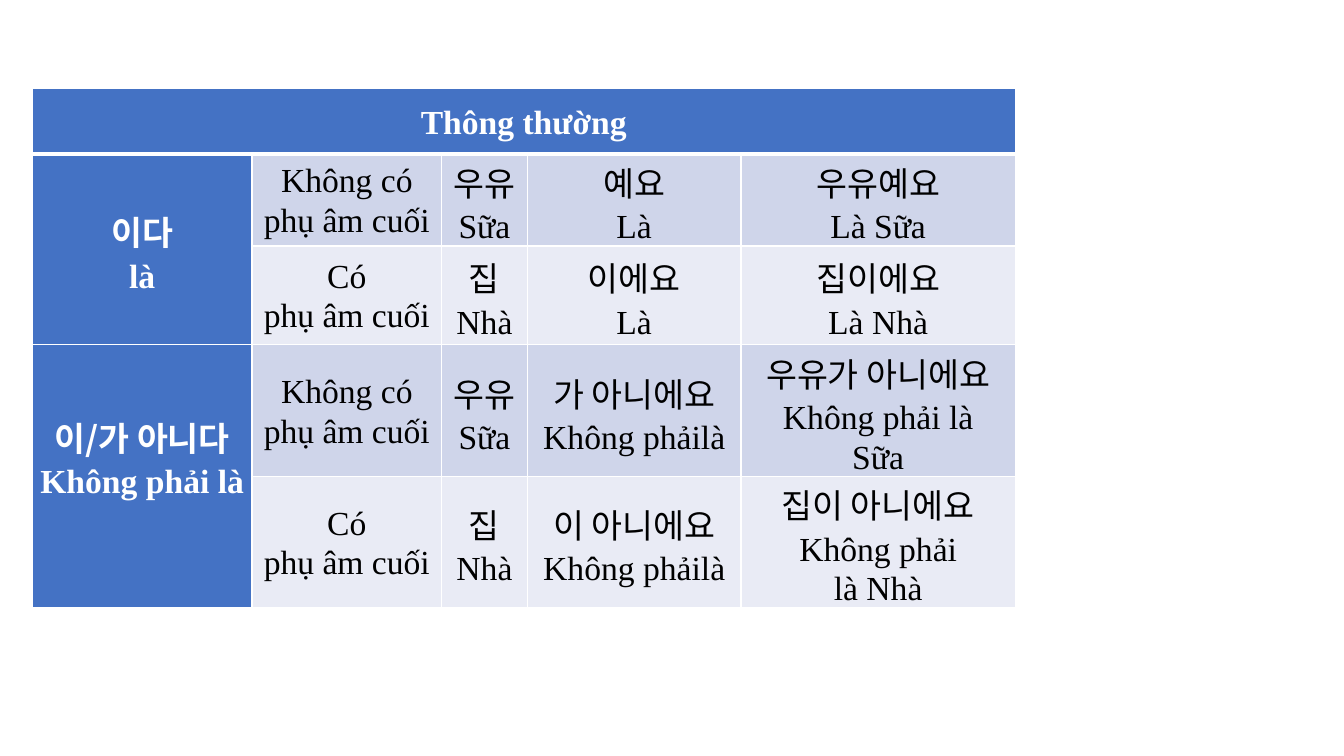
import dataclasses

import lxml.etree
import pptx
import pptx.dml.color
import pptx.enum.text
import pptx.oxml.ns
import pptx.util

Inches = pptx.util.Inches
Pt = pptx.util.Pt
qn = pptx.oxml.ns.qn

LATIN = "Times New Roman"
KOREAN = "Noto Sans CJK KR"
BLUE, WHITE, BLACK = "4472C4", "FFFFFF", "000000"
BANDS = ["CFD5EA", "E9EBF5"]
WIDTHS = [2.18, 1.88, 0.85, 2.12, 2.72]
HEIGHTS = [0.65, 0.85, 0.98, 1.28, 1.28]


@dataclasses.dataclass
class Head:
    row: int
    rows: int
    cols: int
    lines: list[str]
    foot: float = 0  # bottom margin, lifts the text


HEADS = [
    Head(0, 1, 5, ["Thông thường"]),
    Head(1, 2, 1, ["이다", "là"]),
    Head(3, 2, 1, ["이/가 아니다", "Không phải là"], 0.42),
]
NO_END = ["Không có", "phụ âm cuối"]
WITH_END = ["Có", "phụ âm cuối"]
MILK, HOUSE = ["우유", "Sữa"], ["집", "Nhà"]
BODY = [
    [NO_END, MILK, ["예요", "Là"], ["우유예요", "Là Sữa"]],
    [WITH_END, HOUSE, ["이에요", "Là"], ["집이에요", "Là Nhà"]],
    [NO_END, MILK, ["가 아니에요", "Không phảilà"],
     ["우유가 아니에요", "Không phải là", "Sữa"]],
    [WITH_END, HOUSE, ["이 아니에요", "Không phảilà"],
     ["집이 아니에요", "Không phải", "là Nhà"]],
]


def color(code: str) -> pptx.dml.color.RGBColor:
    return pptx.dml.color.RGBColor.from_string(code)


def border(cell, low: float = 1) -> None:
    """Draw white lines around a cell, the bottom one `low` points wide."""
    props = cell._tc.get_or_add_tcPr()
    for side, width in zip("LRTB", [1, 1, 1, low]):
        line = lxml.etree.SubElement(props, qn(f"a:ln{side}"), w=str(Pt(width)))
        fill = lxml.etree.SubElement(line, qn("a:solidFill"))
        lxml.etree.SubElement(fill, qn("a:srgbClr"), val=WHITE)


def write(cell, lines: list[str], ink: str, bold: bool) -> None:
    """Write centred lines, Korean ones in the Korean font."""
    for num, text in enumerate(lines):
        frame = cell.text_frame
        para = frame.add_paragraph() if num else frame.paragraphs[0]
        para.alignment = pptx.enum.text.PP_ALIGN.CENTER
        para.line_spacing = 1.07
        run = para.add_run()
        run.text = text
        face = KOREAN if any("가" <= char <= "힣" for char in text) else LATIN
        font = run.font
        font.size, font.bold, font.name = Pt(24), bold, face
        font.color.rgb = color(ink)
        lxml.etree.SubElement(run._r.get_or_add_rPr(), qn("a:ea"), typeface=face)


def style(cell, back: str, foot: float = 0) -> None:
    cell.fill.solid()
    cell.fill.fore_color.rgb = color(back)
    cell.vertical_anchor = pptx.enum.text.MSO_ANCHOR.MIDDLE
    cell.margin_left = cell.margin_right = Inches(0.07)
    cell.margin_top, cell.margin_bottom = 0, Inches(foot)


def main() -> None:
    deck = pptx.Presentation()
    deck.slide_width, deck.slide_height = Inches(13.33), Inches(7.5)
    slide = deck.slides.add_slide(deck.slide_layouts[6])

    # Table grid
    table = slide.shapes.add_table(
        len(HEIGHTS), len(WIDTHS), Inches(0.32), Inches(0.88),
        Inches(sum(WIDTHS)), Inches(sum(HEIGHTS))).table
    for col, width in zip(table.columns, WIDTHS):
        col.width = Inches(width)
    for num, (row, height) in enumerate(zip(table.rows, HEIGHTS)):
        row.height = Inches(height)
        for cell in row.cells:
            border(cell, 1 if num else 3)

    # Blue headings
    for head in HEADS:
        cell = table.cell(head.row, 0)
        cell.merge(table.cell(head.row + head.rows - 1, head.cols - 1))
        style(cell, BLUE, head.foot)
        write(cell, head.lines, WHITE, True)

    # Banded body
    for row, items in enumerate(BODY):
        for col, lines in enumerate(items, 1):
            cell = table.cell(row + 1, col)
            style(cell, BANDS[row % 2])
            write(cell, lines, BLACK, False)

    deck.save("out.pptx")


if __name__ == "__main__":
    main()
